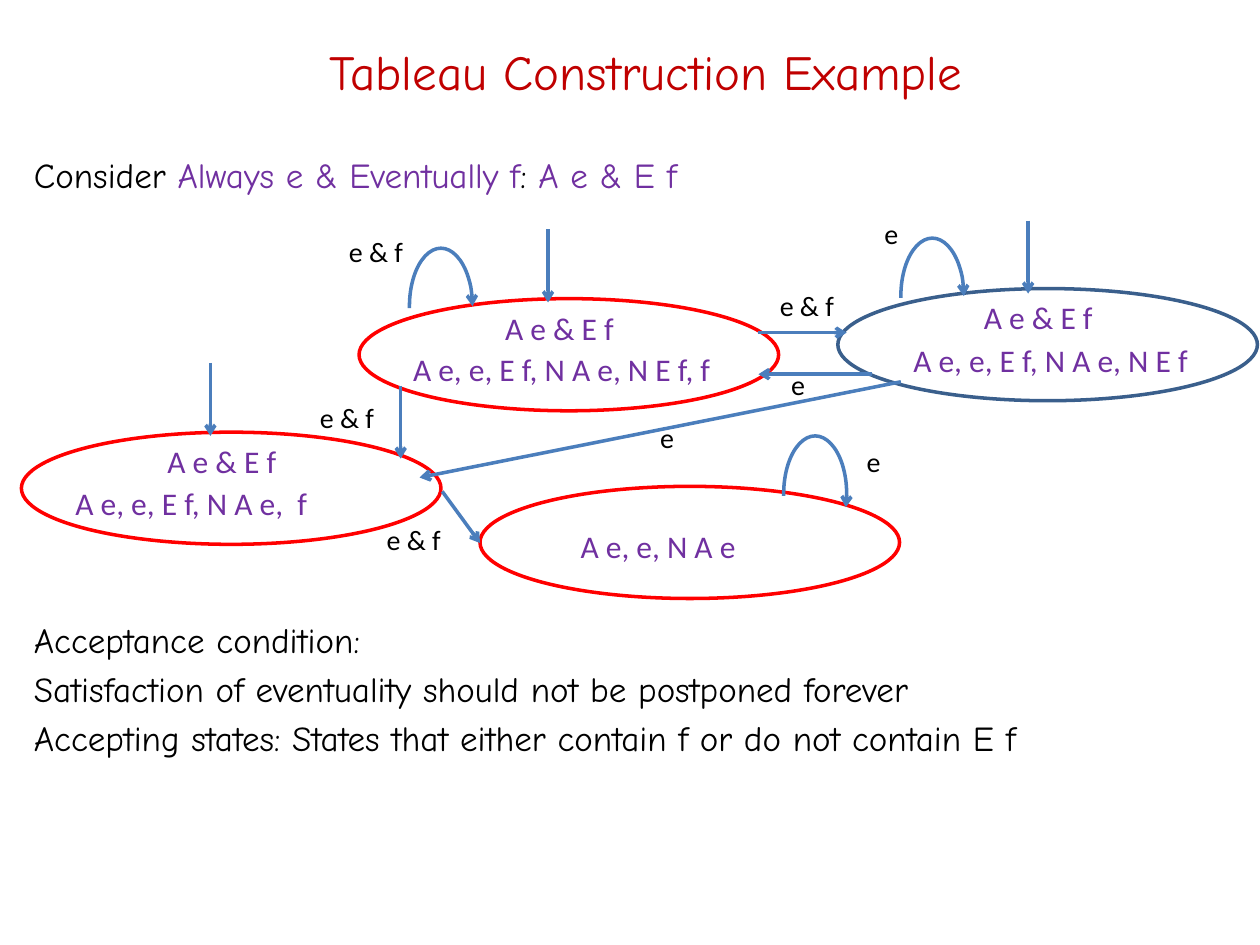
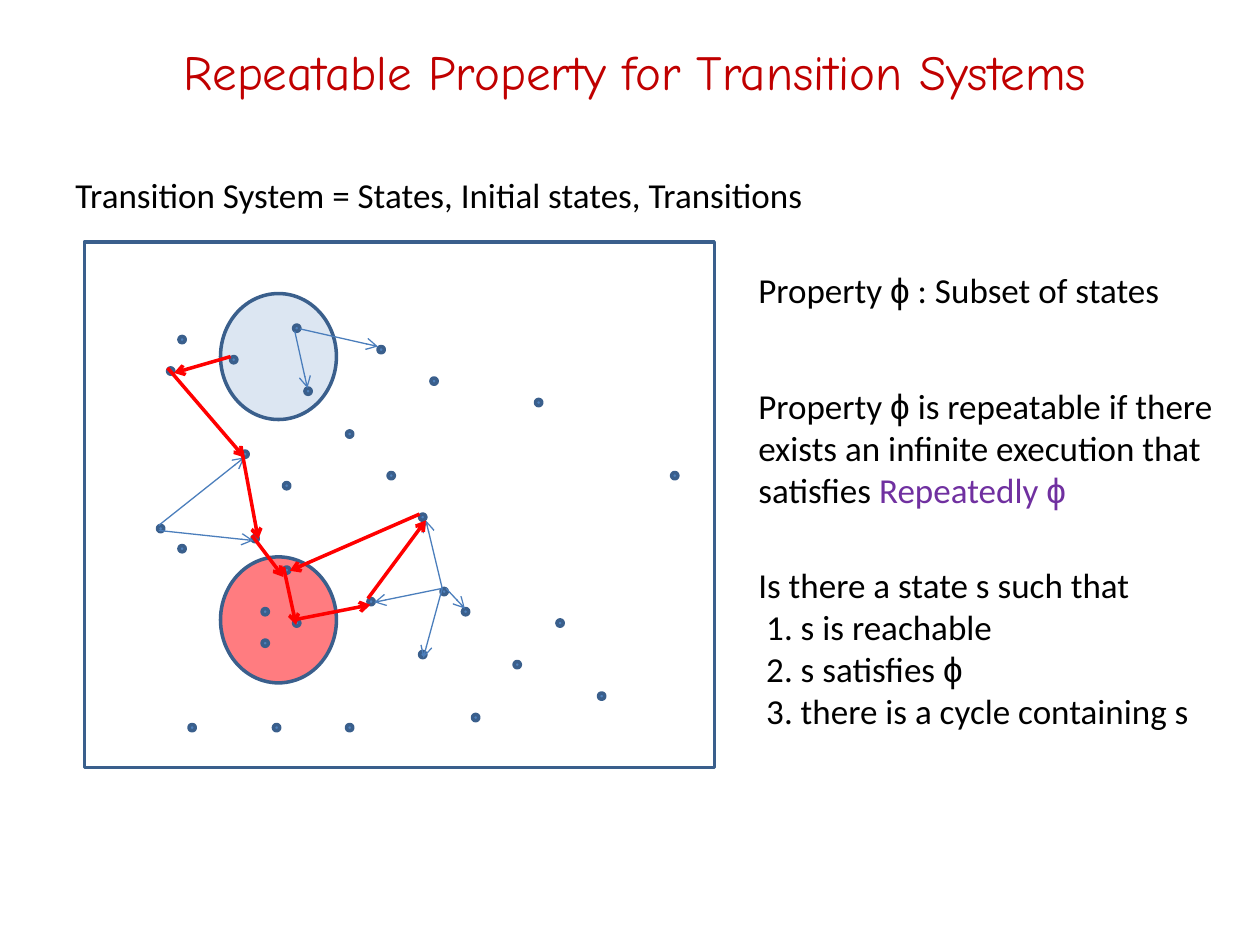
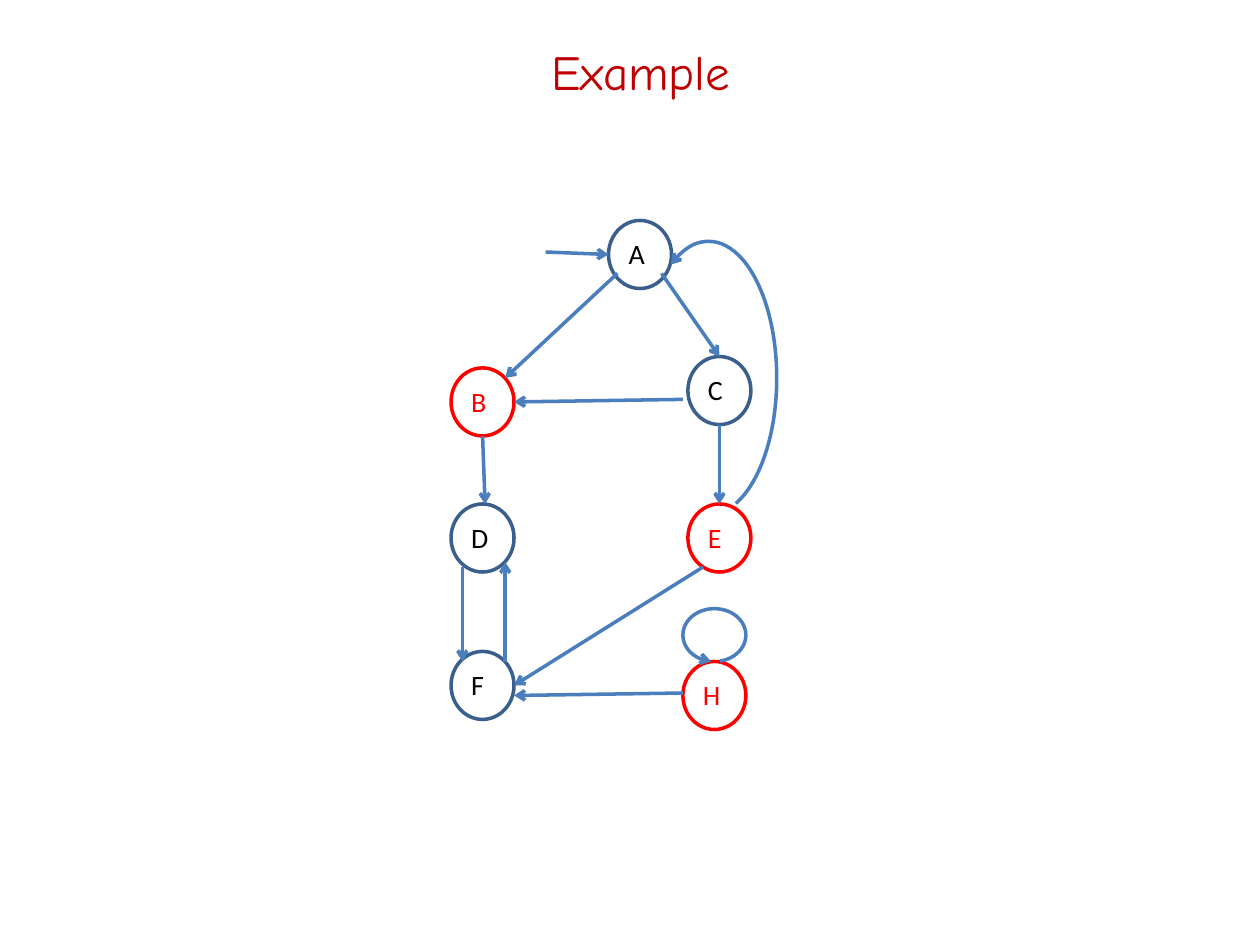
from pptx import Presentation
from pptx.dml.color import RGBColor
from pptx.enum.shapes import MSO_CONNECTOR, MSO_SHAPE
from pptx.enum.text import MSO_ANCHOR, MSO_AUTO_SIZE, PP_ALIGN
from pptx.oxml.ns import qn
from pptx.util import Inches, Pt
from lxml import etree

STRAIGHT = MSO_CONNECTOR.STRAIGHT
ELLIPSE, RECTANGLE, ARC = MSO_SHAPE.OVAL, MSO_SHAPE.RECTANGLE, MSO_SHAPE.ARC
MIDDLE, CENTER = MSO_ANCHOR.MIDDLE, PP_ALIGN.CENTER
FIT_SHAPE = MSO_AUTO_SIZE.SHAPE_TO_FIT_TEXT

COLORS = {"title": "C00000", "text": "000000", "formula": "7030A0",
          "arrow": "4B7EBC", "outline": "3A5F8C", "accent": "FF0000",
          "dot": "4F81BD", "initial": "DCE6F2", "property": "FF7C80"}
HAND, BODY, SYMBOL = "Comic Neue", "Calibri", "Arial"
LINE_WIDTH, THIN_WIDTH = 2, 0.75

# Slide 1: states are (left, top, outline, labels); a label is (dx, dy, width, text)
FORMULA_LABEL = (1.06, 0.03, 1.21, "A e & E f")
STATE_SIZE = (3.33, 0.89)
TABLEAU_STATES = [
    (6.65, 2.29, "outline", [FORMULA_LABEL, (0.5, 0.37, 2.84, "A e, e, E f, N A e, N E f")]),
    (2.85, 2.37, "accent", [FORMULA_LABEL, (0.33, 0.36, 2.84, "A e, e, E f, N A e, N E f, f")]),
    (0.17, 3.43, "accent", [FORMULA_LABEL, (0.33, 0.36, 2.84, "A e, e, E f, N A e,  f")]),
    (3.81, 3.86, "accent", [(0.7, 0.27, 2.06, "A e, e, N A e")]),
]
TABLEAU_ARROWS = [
    (8.16, 1.75, 8.16, 2.33), (4.35, 1.82, 4.35, 2.4), (1.67, 2.88, 1.67, 3.46),
    (3.51, 3.9, 3.81, 4.31), (6.02, 2.64, 6.72, 2.64), (6.92, 2.97, 6.02, 2.97),
    (3.18, 3.06, 3.18, 3.64), (7.15, 3.03, 3.33, 3.79),
]
SELF_LOOPS = [(7.15, 1.89, 0), (3.25, 1.97, 0), (6.22, 3.46, 23.6)]  # left, top, end angle
EDGE_LABELS = [
    (2.67, 1.81, 0.69, "e & f"), (6.09, 2.24, 0.69, "e & f"),
    (2.44, 3.13, 0.69, "e & f"), (2.97, 4.1, 0.69, "e & f"),
    (6.78, 3.48, 0.36, "e"), (6.92, 1.67, 0.31, "e"),
    (5.14, 3.29, 0.36, "e"), (6.18, 2.87, 0.36, "e"),
]
GOAL = [[("Consider ",), ("Always e & Eventually f", "formula"), (": ",),
         ("A e & E f", "formula")]]
ACCEPTANCE = [
    [("Acceptance condition:",)],
    [("Satisfaction of eventuality should not be postponed forever",)],
    [("Accepting states: States that either contain f or do not contain E f",)],
]

# Slide 2: transition system
PHI = ("ϕ", "text", SYMBOL)
REGIONS = [(4.42, "property"), (2.33, "initial")]
DOT_SIZE = 0.05
DOTS = [
    (1.42, 2.67), (1.83, 2.83), (1.33, 2.92), (1.92, 3.58), (2.33, 2.58), (2.42, 3.08),
    (2.25, 3.83), (2.25, 4.5), (3, 2.75), (3.08, 3.75), (2, 4.25), (2.08, 5.08),
    (3.42, 3), (2.75, 3.42), (2.33, 4.92), (2.92, 4.75), (1.25, 4.17), (1.42, 4.33),
    (2.08, 4.83), (1.5, 5.75), (3.5, 4.67), (3.67, 4.83), (3.33, 5.17), (2.75, 5.75),
    (3.33, 4.08), (4.25, 3.17), (4.08, 5.25), (2.17, 5.75), (3.75, 5.67), (5.33, 3.75),
    (4.42, 4.92), (4.75, 5.5),
]
TRANSITIONS = [
    (2.38, 2.61, 3, 2.75), (2.34, 2.63, 2.44, 3.08), (3.51, 4.67, 3.36, 5.22),
    (3.51, 4.67, 2.97, 4.78), (3.54, 4.67, 3.69, 4.83), (3.51, 4.67, 3.38, 4.13),
    (1.26, 4.17, 1.94, 3.63), (1.26, 4.21, 2.01, 4.29),
]
EXECUTION = [
    (1.83, 2.83, 1.38, 2.96), (1.33, 2.92, 1.94, 3.63), (1.92, 3.58, 2.05, 4.28),
    (2, 4.25, 2.25, 4.58), (2.25, 4.5, 2.35, 4.96), (2.33, 4.92, 2.94, 4.8),
    (2.92, 4.75, 3.38, 4.13), (3.33, 4.08, 2.3, 4.53),
]
NOTES = [
    ((0.5, 1.33, 6.04, 0.44), [[("Transition System = States, Initial states, Transitions",)]]),
    ((5.92, 2.08, 3.43, 0.44), [[("Property ",), PHI, (" : Subset of states",)]]),
    ((5.92, 3, 3.85, 1.11), [
        [("Property ",), PHI, (" is repeatable if there",)],
        [("exists an infinite execution that",)],
        [("satisfies ",), ("Repeatedly ", "formula"), ("ϕ", "formula", SYMBOL)]]),
    ((5.92, 4.42, 3.65, 1.45), [
        [("Is there a state s such that",)],
        [(" 1. s is reachable",)],
        [(" 2. s satisfies ",), PHI],
        [(" 3. there is a cycle containing s",)]]),
]

# Slide 3: graph nodes are (name, left, top, accepting)
NODE_SIZE = (0.5, 0.54)
NODES = [
    ("A", 4.83, 1.75, False), ("B", 3.58, 2.92, True), ("D", 3.58, 4, False),
    ("C", 5.46, 2.83, False), ("E", 5.46, 4, True), ("F", 3.58, 5.17, False),
    ("H", 5.42, 5.25, True),
]
GRAPH_ARROWS = [
    (4.9, 2.17, 4.01, 3), (3.83, 3.46, 3.85, 4), (3.67, 4.5, 3.67, 5.25),
    (4.01, 5.25, 4.01, 4.46), (5.71, 3.37, 5.71, 4), (5.58, 4.5, 4.08, 5.44),
    (5.42, 3.17, 4.08, 3.19), (4.33, 2, 4.83, 2.02), (5.25, 2.17, 5.71, 2.83),
    (5.42, 5.5, 4.08, 5.52),
]
BACK_ARCS = [((4.54, 2.46, 2.17, 1.08), 18.5), ((5.46, 4.79, 0.42, 0.5), 173)]


def color(name):
    return RGBColor.from_string(COLORS[name])


def set_line(part, name, width=LINE_WIDTH):
    part.line.color.rgb = color(name)
    part.line.width = Pt(width)


def add_arrowhead(part):
    etree.SubElement(part.line._get_or_add_ln(), qn("a:tailEnd"), type="arrow")


def add_arrow(page, ends, name="arrow", width=LINE_WIDTH):
    arrow = page.shapes.add_connector(STRAIGHT, *map(Inches, ends))
    set_line(arrow, name, width)
    add_arrowhead(arrow)
    etree.SubElement(arrow.element.spPr, qn("a:effectLst"))


def add_outlined(shapes, kind, frame, outline="outline", fill=None):
    shape = shapes.add_shape(kind, *map(Inches, frame))
    shape.shadow.inherit = False
    if fill:
        shape.fill.solid()
        shape.fill.fore_color.rgb = color(fill)
    else:
        shape.fill.background()
    set_line(shape, outline)
    return shape


def add_arc(page, frame, start, end, turned=False):
    """Arc with an arrowhead; the angles are in degrees."""
    arc = add_outlined(page.shapes, ARC, frame, "arrow")
    for index, angle in enumerate((start, end)):
        arc.adjustments[index] = angle * 0.6  # 60000 units a degree, over 100000
    if turned:
        arc.rotation = 90
        arc.element.spPr.xfrm.set("flipH", "1")
    add_arrowhead(arc)


def add_text(shapes, frame, paragraphs, size, font=BODY, wrap=False, space=0, fit=True):
    """Each paragraph is a list of spans: (text, color name, font)."""
    box = shapes.add_textbox(*map(Inches, frame))
    text_frame = box.text_frame
    text_frame.word_wrap = wrap
    if fit:
        text_frame.auto_size = FIT_SHAPE
    for index, spans in enumerate(paragraphs):
        para = text_frame.add_paragraph() if index else text_frame.paragraphs[0]
        para.space_before = Pt(space)
        for text, name, face in ((*span, "text", font)[:3] if len(span) == 1
                                 else (*span, font)[:3] for span in spans):
            span = para.add_run()
            span.text = text
            span.font.size = Pt(size)
            span.font.name = face
            span.font.color.rgb = color(name)
    return text_frame


def add_page(deck, title, left, width):
    page = deck.slides.add_slide(deck.slide_layouts[6])
    text_frame = add_text(page.shapes, (left, 0.17, width, 0.78), [[(title, "title")]],
                          28, HAND, wrap=True, fit=False)
    text_frame.vertical_anchor = MIDDLE
    text_frame.paragraphs[0].alignment = CENTER
    return page


def build_tableau(deck):
    page = add_page(deck, "Tableau Construction Example", 0.75, 8.75)
    for frame, paragraphs in (((0.17, 1.17, 6.04, 0.75), GOAL),
                              ((0.17, 4.86, 9.67, 1.48), ACCEPTANCE)):
        add_text(page.shapes, frame, paragraphs, 20, HAND, wrap=True, space=4, fit=False)
    for left, top, outline, labels in TABLEAU_STATES:
        state = page.shapes.add_group_shape()
        add_outlined(state.shapes, ELLIPSE, (left, top, *STATE_SIZE), outline)
        for dx, dy, width, text in labels:
            add_text(state.shapes, (left + dx, top + dy, width, 0.4),
                     [[(text, "formula")]], 18, wrap=True)
    for left, top, end in SELF_LOOPS:
        add_arc(page, (left, top, 0.5, 0.92), 176.53, end)
    for ends in TABLEAU_ARROWS:
        add_arrow(page, ends)
    for left, top, width, text in EDGE_LABELS:
        add_text(page.shapes, (left, top, width, 0.37), [[(text,)]], 16)


def build_transition_system(deck):
    page = add_page(deck, "Repeatable Property for Transition Systems", 0.75, 8.58)
    for top, fill in REGIONS:
        add_outlined(page.shapes, ELLIPSE, (1.75, top, 0.92, 1), fill=fill)
    add_outlined(page.shapes, RECTANGLE, (0.67, 1.92, 5, 4.17))
    for left, top in DOTS:
        add_outlined(page.shapes, ELLIPSE, (left, top, DOT_SIZE, DOT_SIZE), fill="dot")
    for ends in TRANSITIONS:
        add_arrow(page, ends, width=THIN_WIDTH)
    for frame, paragraphs in NOTES:
        add_text(page.shapes, frame, paragraphs, 20)
    for ends in EXECUTION:
        add_arrow(page, ends, "accent")


def build_graph(deck):
    page = add_page(deck, "Example", 0.67, 8.83)
    for name, left, top, accepting in NODES:
        node = page.shapes.add_group_shape()
        add_outlined(node.shapes, ELLIPSE, (left, top, *NODE_SIZE),
                     "accent" if accepting else "outline")
        add_text(node.shapes, (left + 0.06, top + 0.08, 0.38, 0.37),
                 [[(name, "accent" if accepting else "text")]], 16)
    for ends in GRAPH_ARROWS:
        add_arrow(page, ends)
    for frame, end in BACK_ARCS:
        add_arc(page, frame, 192.19, end, turned=True)


def main():
    deck = Presentation()
    deck.slide_width, deck.slide_height = Inches(10), Inches(7.5)
    build_tableau(deck)
    build_transition_system(deck)
    build_graph(deck)
    deck.save("out.pptx")


if __name__ == "__main__":
    main()
